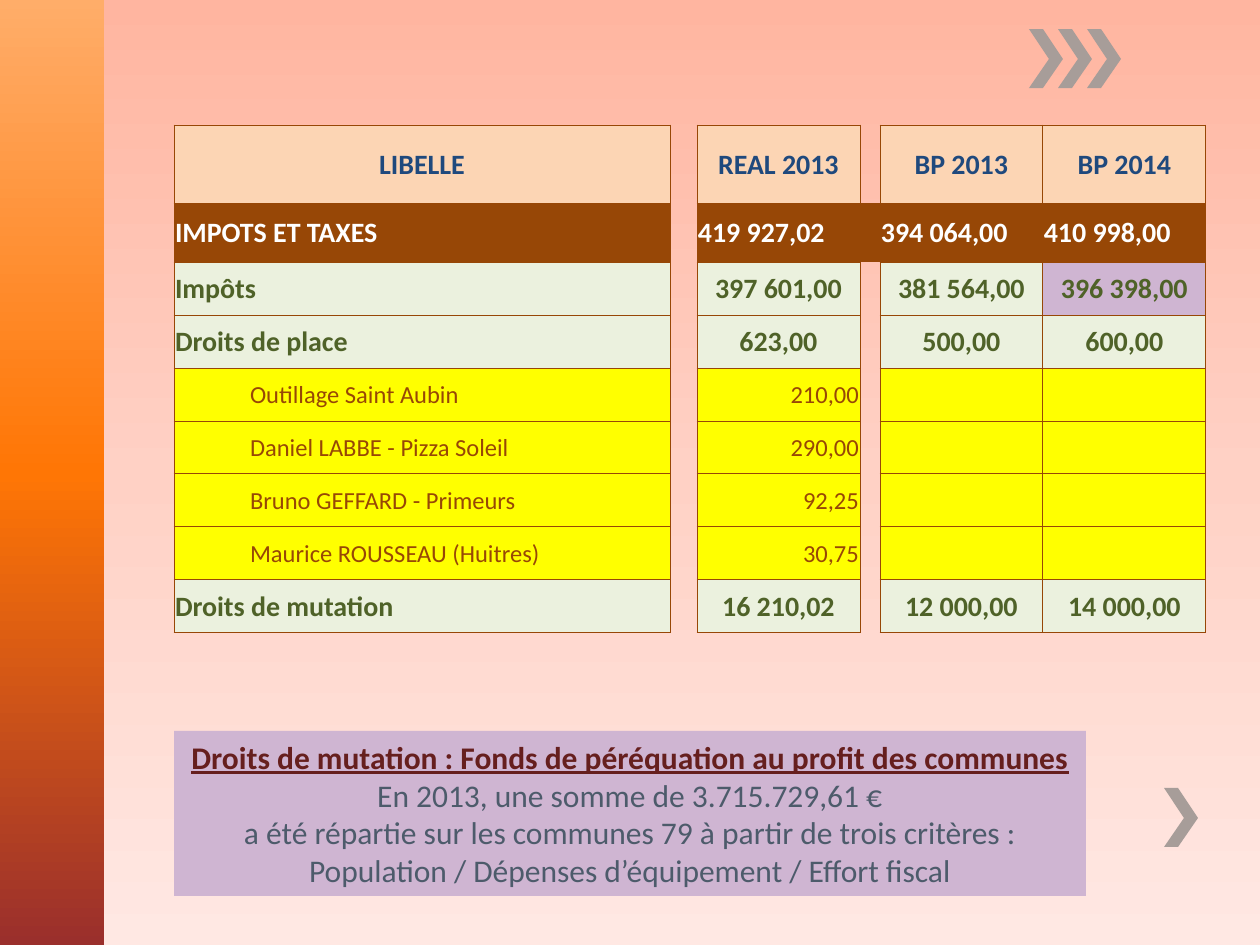
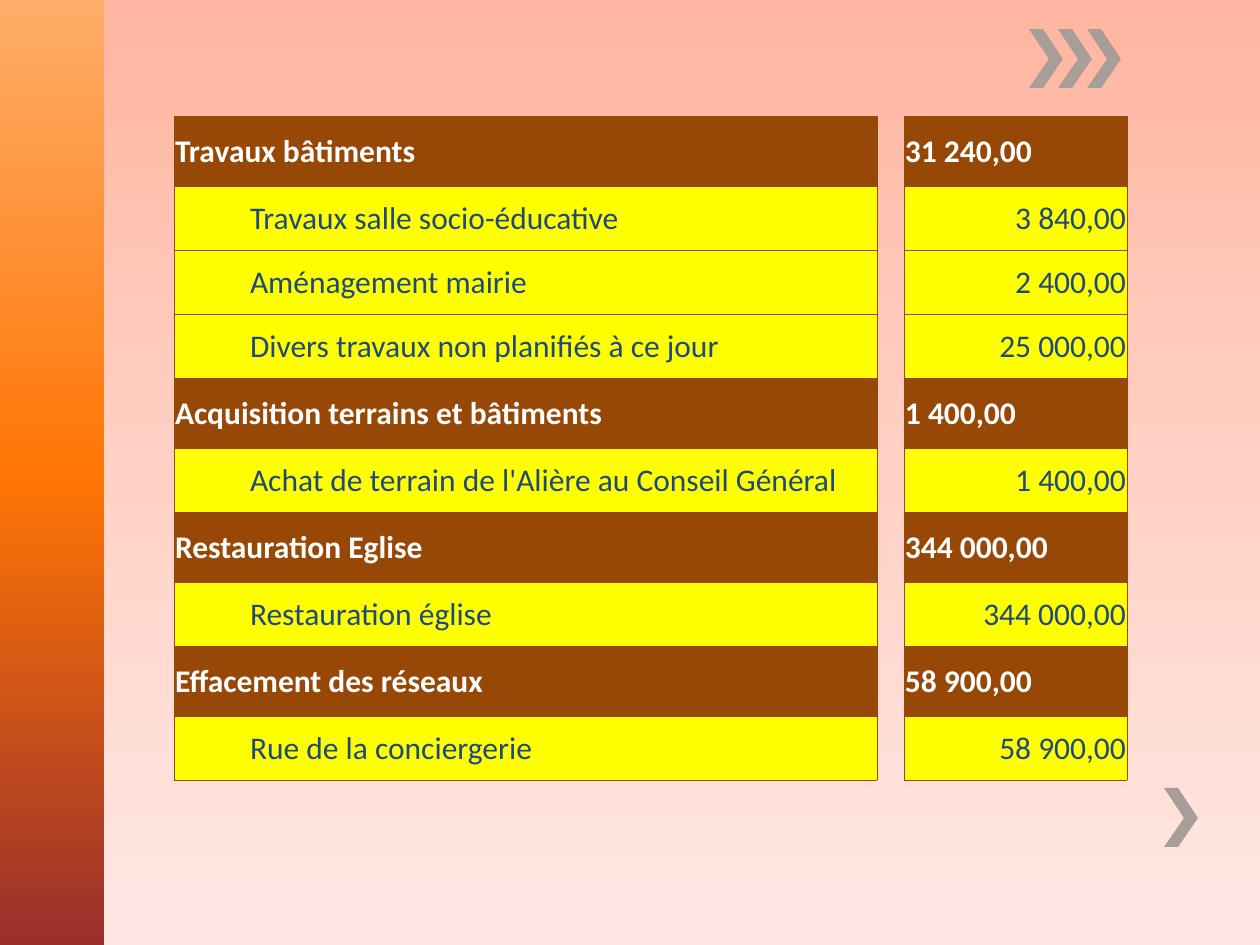
from copy import deepcopy
from dataclasses import dataclass
from typing import NamedTuple

from lxml import etree
from pptx import Presentation
from pptx.dml.color import RGBColor
from pptx.dml.fill import FillFormat
from pptx.enum.shapes import MSO_SHAPE
from pptx.enum.text import MSO_ANCHOR, MSO_AUTO_SIZE, PP_ALIGN
from pptx.oxml.ns import qn
from pptx.slide import Slide
from pptx.table import _Cell
from pptx.text.text import _Paragraph
from pptx.util import Emu, Pt

EMU_PER_PX = 914400 / 126
PAGE_WIDTH, PAGE_HEIGHT = 1260, 945
BLANK_LAYOUT = 6
FONT = "Calibri"
CONTENT_LEFT = 174

RECTANGLE = MSO_SHAPE.RECTANGLE
MIDDLE = MSO_ANCHOR.MIDDLE
GROW = MSO_AUTO_SIZE.SHAPE_TO_FIT_TEXT
LEFT, CENTER, RIGHT = PP_ALIGN.LEFT, PP_ALIGN.CENTER, PP_ALIGN.RIGHT

WHITE = RGBColor(0xFF, 0xFF, 0xFF)
BROWN = RGBColor(0x97, 0x47, 0x06)
NAVY = RGBColor(0x1F, 0x49, 0x7D)
OLIVE = RGBColor(0x4F, 0x62, 0x28)
PEACH = RGBColor(0xFC, 0xD5, 0xB4)
PALE_GREEN = RGBColor(0xEB, 0xF1, 0xDE)
YELLOW = RGBColor(0xFF, 0xFF, 0x00)
LILAC = RGBColor(0xCF, 0xB5, 0xD2)
MAROON = RGBColor(0x66, 0x1F, 0x1E)
SLATE = RGBColor(0x4D, 0x5B, 0x6B)
CHEVRON_GREY = RGBColor(0xA7, 0x9D, 0x99)
BACKGROUND_COLORS = (RGBColor(0xFF, 0xB5, 0xA0), RGBColor(0xFF, 0xD1, 0xC5),
                     RGBColor(0xFF, 0xE8, 0xE3))
BAND_COLORS = (RGBColor(0xFF, 0xAD, 0x69), RGBColor(0xFF, 0x76, 0x05),
               RGBColor(0x9A, 0x2F, 0x2C))

BAND_WIDTH = 104
CHEVRON_OUTLINE = ((14, 0), (0, 0), (20, 30), (0, 59), (14, 59), (34, 30))
CHEVRON_PLACES = [(1029 + 29 * i, 29) for i in range(3)] + [(1164, 788)]

NO_GRID_STYLE = "{2D5ABB26-0587-4C30-8999-92F81FD0307C}"
CELL_INSET, INDENT = 1, 76
BORDER_WIDTH = Pt(0.5)
BORDER_TAGS = {"l": "a:lnL", "r": "a:lnR", "t": "a:lnT", "b": "a:lnB"}


class Column(NamedTuple):
    width: int
    sides: str = "lrtb"
    is_gap: bool = False


@dataclass(frozen=True)
class RowStyle:
    height: int
    size: int
    color: RGBColor
    fill: RGBColor
    bold: bool = True
    label_align: PP_ALIGN = LEFT
    value_align: PP_ALIGN = CENTER
    label_inset: int = CELL_INSET


class Row(NamedTuple):
    style: RowStyle
    texts: tuple[str, ...]


class NoteLine(NamedTuple):
    text: str
    color: RGBColor = SLATE
    is_heading: bool = False


LABEL_GAP = Column(27, "l", True)
YEAR_GAP = Column(20, "lr", True)

TAX_COLUMNS = (Column(496), LABEL_GAP, Column(163, "rtb"), YEAR_GAP, Column(163), Column(163))
TAX_HEADER = RowStyle(78, 16, NAVY, PEACH, label_align=CENTER)
TAX_TOTAL = RowStyle(59, 16, WHITE, BROWN, value_align=LEFT)
TAX_GROUP = RowStyle(53, 16, OLIVE, PALE_GREEN)
TAX_DETAIL = RowStyle(53, 14, BROWN, YELLOW, False, value_align=RIGHT, label_inset=INDENT)
TAX_ROWS = (
    Row(TAX_HEADER, ("LIBELLE", "REAL 2013", "BP 2013", "BP 2014")),
    Row(TAX_TOTAL, ("IMPOTS ET TAXES", "419 927,02", "394 064,00", "410 998,00")),
    Row(TAX_GROUP, ("Impôts", "397 601,00", "381 564,00", "396 398,00")),
    Row(TAX_GROUP, ("Droits de place", "623,00", "500,00", "600,00")),
    Row(TAX_DETAIL, ("Outillage Saint Aubin", "210,00", "", "")),
    Row(TAX_DETAIL, ("Daniel LABBE - Pizza Soleil", "290,00", "", "")),
    Row(TAX_DETAIL, ("Bruno GEFFARD - Primeurs", "92,25", "", "")),
    Row(TAX_DETAIL, ("Maurice ROUSSEAU (Huitres)", "30,75", "", "")),
    Row(TAX_GROUP, ("Droits de mutation", "16 210,02", "12 000,00", "14 000,00")),
)
# Cells whose fill differs from the rest of their row, by (row, column).
TAX_FILLS = {(1, 3): BROWN, (2, 5): LILAC}

NOTE_LINES = (
    NoteLine("Droits de mutation : Fonds de péréquation au profit des communes", MAROON, True),
    NoteLine("En 2013, une somme de 3.715.729,61 €"),
    NoteLine("a été répartie sur les communes 79 à partir de trois critères :"),
    NoteLine("Population / Dépenses d’équipement / Effort fiscal"),
)

WORKS_COLUMNS = (Column(703), LABEL_GAP, Column(223, "rtb"))
WORKS_TOTAL = RowStyle(70, 18, WHITE, BROWN, value_align=LEFT)
WORKS_DETAIL = RowStyle(64, 18, NAVY, YELLOW, False, value_align=RIGHT, label_inset=INDENT)
WORKS_ROWS = (
    Row(WORKS_TOTAL, ("Travaux bâtiments", "31 240,00")),
    Row(WORKS_DETAIL, ("Travaux salle socio-éducative", "3 840,00")),
    Row(WORKS_DETAIL, ("Aménagement mairie", "2 400,00")),
    Row(WORKS_DETAIL, ("Divers travaux non planifiés à ce jour", "25 000,00")),
    Row(WORKS_TOTAL, ("Acquisition terrains et bâtiments", "1 400,00")),
    Row(WORKS_DETAIL, ("Achat de terrain de l'Alière au Conseil Général", "1 400,00")),
    Row(WORKS_TOTAL, ("Restauration Eglise", "344 000,00")),
    Row(WORKS_DETAIL, ("Restauration église", "344 000,00")),
    Row(WORKS_TOTAL, ("Effacement des réseaux", "58 900,00")),
    Row(WORKS_DETAIL, ("Rue de la conciergerie", "58 900,00")),
)


def px(length: int) -> Emu:
    return Emu(round(length * EMU_PER_PX))


def fill_gradient(fill: FillFormat, colors: tuple[RGBColor, ...]) -> None:
    """Paint three evenly spaced colours from top to bottom."""
    fill.gradient()
    fill.gradient_angle = 270
    last_stop = fill.gradient_stops[1]._gs
    last_stop.addnext(deepcopy(last_stop))
    for index, (stop, color) in enumerate(zip(fill.gradient_stops, colors)):
        stop.color.rgb = color
        stop.position = index / (len(colors) - 1)


def format_paragraph(para: _Paragraph, size: int, color: RGBColor, bold: bool,
                     align: PP_ALIGN, underline: bool = False) -> None:
    para.alignment = align
    for span in para.runs:
        span.font.name = FONT
        span.font.size = Pt(size)
        span.font.bold = bold
        span.font.underline = underline
        span.font.color.rgb = color


def draw_chevron(page: Slide, left: int, top: int) -> None:
    points = [(left + x, top + y) for x, y in CHEVRON_OUTLINE]
    builder = page.shapes.build_freeform(*points[0], scale=EMU_PER_PX)
    builder.add_line_segments(points[1:], close=True)
    chevron = builder.convert_to_shape()
    chevron.shadow.inherit = False
    chevron.fill.solid()
    chevron.fill.fore_color.rgb = CHEVRON_GREY
    chevron.line.fill.background()


def add_page(deck: Presentation) -> Slide:
    """Add a page with the shared background, side band and chevrons."""
    page = deck.slides.add_slide(deck.slide_layouts[BLANK_LAYOUT])
    fill_gradient(page.background.fill, BACKGROUND_COLORS)
    band = page.shapes.add_shape(RECTANGLE, 0, 0, px(BAND_WIDTH), px(PAGE_HEIGHT))
    band.shadow.inherit = False
    fill_gradient(band.fill, BAND_COLORS)
    band.line.fill.background()
    for left, top in CHEVRON_PLACES:
        draw_chevron(page, left, top)
    return page


def add_borders(cell: _Cell, sides: str) -> None:
    properties = cell._tc.get_or_add_tcPr()
    for side in sides:
        line = etree.SubElement(properties, qn(BORDER_TAGS[side]), w=str(BORDER_WIDTH))
        solid = etree.SubElement(line, qn("a:solidFill"))
        etree.SubElement(solid, qn("a:srgbClr"), val=str(BROWN))


def fill_cell(cell: _Cell, color: RGBColor | None) -> None:
    if color is None:
        cell.fill.background()
    else:
        cell.fill.solid()
        cell.fill.fore_color.rgb = color


def write_cell(cell: _Cell, text: str, style: RowStyle, is_label: bool) -> None:
    cell.text_frame.text = text
    align = style.label_align if is_label else style.value_align
    format_paragraph(cell.text_frame.paragraphs[0], style.size, style.color, style.bold, align)


def draw_table(page: Slide, top: int, columns: tuple[Column, ...], rows: tuple[Row, ...],
               special_fills: dict[tuple[int, int], RGBColor]) -> None:
    width = sum(column.width for column in columns)
    height = sum(row.style.height for row in rows)
    table = page.shapes.add_table(len(rows), len(columns), px(CONTENT_LEFT), px(top),
                                  px(width), px(height)).table
    table.first_row = table.horz_banding = False
    table._tbl.tblPr.find(qn("a:tableStyleId")).text = NO_GRID_STYLE
    for index, column in enumerate(columns):
        table.columns[index].width = px(column.width)
    for row_index, row in enumerate(rows):
        style = row.style
        table.rows[row_index].height = px(style.height)
        texts = iter(row.texts)
        for column_index, column in enumerate(columns):
            cell = table.cell(row_index, column_index)
            is_label = column_index == 0
            cell.vertical_anchor = MIDDLE
            cell.margin_left = px(style.label_inset if is_label else CELL_INSET)
            cell.margin_right = cell.margin_top = px(CELL_INSET)
            cell.margin_bottom = 0
            add_borders(cell, column.sides)
            usual_fill = None if column.is_gap else style.fill
            fill_cell(cell, special_fills.get((row_index, column_index), usual_fill))
            if not column.is_gap:
                write_cell(cell, next(texts), style, is_label)


def draw_note(page: Slide) -> None:
    box = page.shapes.add_shape(RECTANGLE, px(CONTENT_LEFT), px(731), px(912), px(165))
    box.shadow.inherit = False
    box.fill.solid()
    box.fill.fore_color.rgb = LILAC
    box.line.fill.background()
    frame = box.text_frame
    frame.word_wrap = True
    frame.auto_size = GROW
    frame.text = "\n".join(line.text for line in NOTE_LINES)
    for para, line in zip(frame.paragraphs, NOTE_LINES):
        format_paragraph(para, 18, line.color, line.is_heading, CENTER, line.is_heading)


def main() -> None:
    deck = Presentation()
    deck.slide_width, deck.slide_height = px(PAGE_WIDTH), px(PAGE_HEIGHT)

    tax_page = add_page(deck)
    draw_table(tax_page, 125, TAX_COLUMNS, TAX_ROWS, TAX_FILLS)
    draw_note(tax_page)

    works_page = add_page(deck)
    draw_table(works_page, 116, WORKS_COLUMNS, WORKS_ROWS, {})

    deck.save("out.pptx")


if __name__ == "__main__":
    main()
